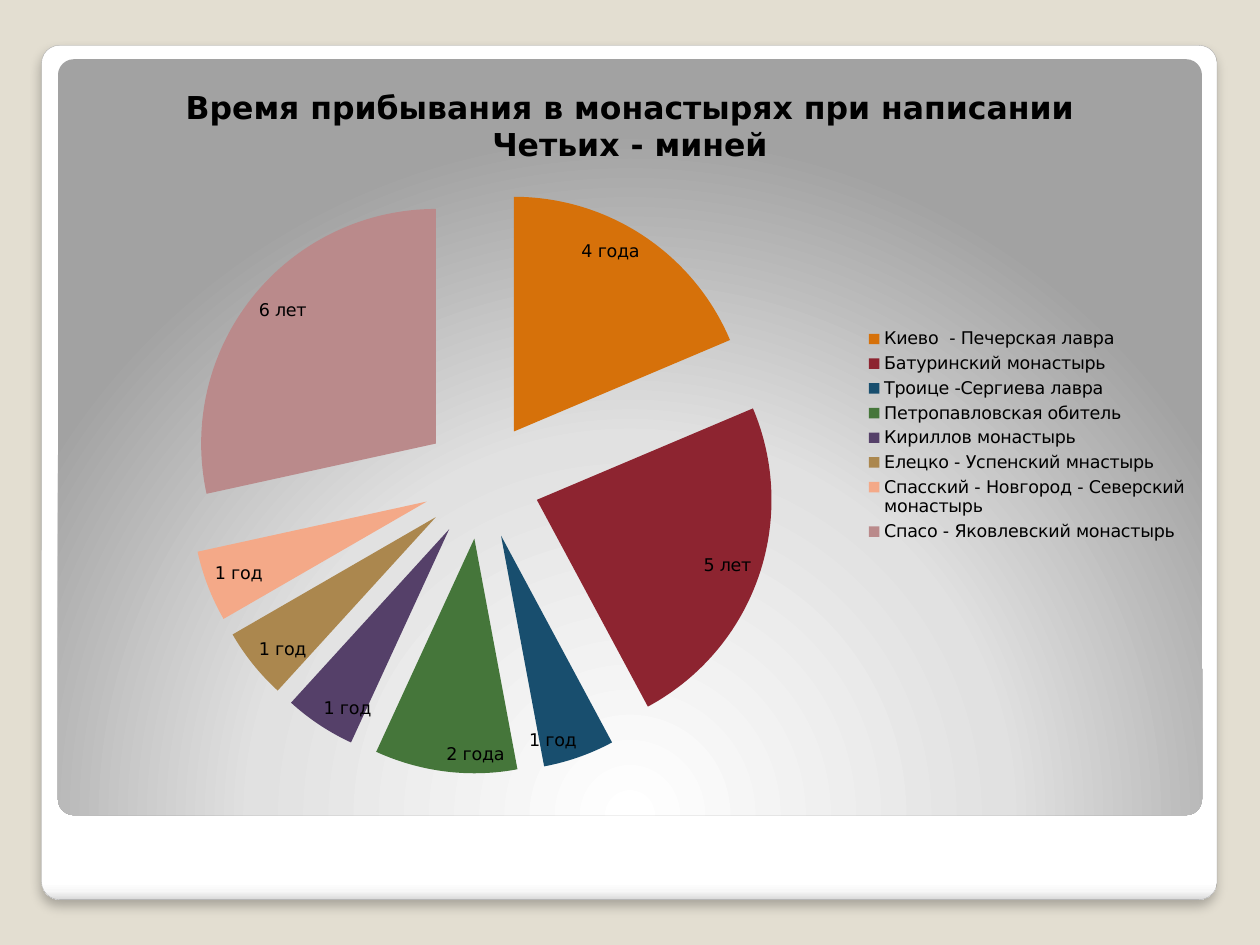
"""Build a slide with an exploded pie chart of the years spent in monasteries."""
from typing import NamedTuple

from lxml.etree import SubElement
from pptx import Presentation
from pptx.chart.data import CategoryChartData
from pptx.dml.color import RGBColor
from pptx.enum.chart import XL_CHART_TYPE as ChartType
from pptx.enum.chart import XL_LABEL_POSITION as LabelPosition
from pptx.enum.chart import XL_LEGEND_POSITION as LegendPosition
from pptx.enum.shapes import MSO_SHAPE as ShapeType
from pptx.oxml import parse_xml
from pptx.oxml.ns import nsdecls, qn
from pptx.util import Inches, Pt

FONT = "DejaVu Sans"
TITLE = "Время прибывания в монастырях при написании Четьих - миней"


class Slice(NamedTuple):
    name: str
    percent: int
    label: str
    color: str


class Panel(NamedTuple):
    left: float
    top: float
    width: float
    height: float
    stops: tuple[tuple[int, str], ...]
    direction: str


SLICES = (
    Slice("Киево  - Печерская лавра", 19, "4 года", "D6710A"),
    Slice("Батуринский монастырь", 24, "5 лет", "8D2430"),
    Slice("Троице -Сергиева лавра", 5, "1 год", "184E6E"),
    Slice("Петропавловская обитель", 10, "2 года", "45763A"),
    Slice("Кириллов монастырь", 5, "1 год", "554069"),
    Slice("Елецко - Успенский мнастырь", 5, "1 год", "AB874E"),
    Slice("Спасский - Новгород - Северский монастырь", 5, "1 год", "F4A988"),
    Slice("Спасо - Яковлевский монастырь", 29, "6 лет", "BA8A8B"),
)
CARD = Panel(
    0.33, 0.36, 9.33, 6.78,
    ((0, "FFFFFF"), (98, "FFFFFF"), (99, "F7F7F7"), (100, "DADADA")),
    '<a:lin ang="5400000" scaled="0"/>',
)
BACKDROP = Panel(
    0.46, 0.47, 9.08, 6,
    ((0, "FFFFFF"), (55, "E1E1E1"), (100, "A2A2A2")),
    '<a:path path="circle"><a:fillToRect l="50000" t="175000" r="50000" b="-75000"/></a:path>',
)


def rgb(value: str) -> RGBColor:
    """Turn a hex string into a colour."""
    return RGBColor.from_string(value)


def style_font(font, size: float, bold: bool = False) -> None:
    """Apply the chart's typeface in black."""
    font.name, font.size, font.bold = FONT, Pt(size), bold
    font.color.rgb = rgb("000000")


def add_panel(slide, panel: Panel):
    """Draw a rounded rectangle with a gradient fill."""
    shape = slide.shapes.add_shape(
        ShapeType.ROUNDED_RECTANGLE,
        *(Inches(length) for length in panel[:4]),
    )
    shape.adjustments[0] = 0.021
    shape.shadow.inherit = False
    shape.line.fill.background()
    stops = "".join(
        f'<a:gs pos="{position * 1000}"><a:srgbClr val="{color}"/></a:gs>'
        for position, color in panel.stops
    )
    gradient = parse_xml(
        f'<a:gradFill rotWithShape="1" {nsdecls("a")}>'
        f"<a:gsLst>{stops}</a:gsLst>{panel.direction}</a:gradFill>"
    )
    shape._element.spPr.find(qn("a:prstGeom")).addnext(gradient)
    return shape


def add_card_edge(shape) -> None:
    """Give the card its thin outline and soft shadow."""
    shape.line.color.rgb = rgb("A4A4A4")
    shape.line.width = Pt(0.16)
    effects = shape._element.spPr.find(qn("a:effectLst"))
    shadow = SubElement(
        effects, qn("a:outerShdw"),
        blurRad=str(Pt(6)), dist=str(Pt(4)), dir="5400000",
        algn="t", rotWithShape="0",
    )
    color = SubElement(shadow, qn("a:srgbClr"), val="000000")
    SubElement(color, qn("a:alpha"), val="25000")


def place_plot(chart, x: float, y: float, w: float, h: float) -> None:
    """Fix the plot area as fractions of the chart and clear the chart's fill."""
    plot_area = chart._chartSpace.chart.plotArea
    for old in plot_area.findall(qn("c:layout")):
        plot_area.remove(old)
    sizes = "".join(
        f'<c:{tag} val="{value}"/>' for tag, value in zip("xywh", (x, y, w, h))
    )
    plot_area.insert(0, parse_xml(
        f'<c:layout {nsdecls("c")}><c:manualLayout><c:layoutTarget val="inner"/>'
        f'<c:xMode val="edge"/><c:yMode val="edge"/>{sizes}'
        "</c:manualLayout></c:layout>"
    ))
    chart._chartSpace.chart.addnext(parse_xml(
        f'<c:spPr {nsdecls("c", "a")}><a:noFill/><a:ln><a:noFill/></a:ln></c:spPr>'
    ))


def explode(series, percent: int) -> None:
    """Pull all slices of a pie away from its centre."""
    explosion = parse_xml(f'<c:explosion {nsdecls("c")} val="{percent}"/>')
    series._element.find(qn("c:tx")).addnext(explosion)


def format_slice(point, item: Slice) -> None:
    """Colour one slice and write its label."""
    point.format.fill.solid()
    point.format.fill.fore_color.rgb = rgb(item.color)
    point.format.line.fill.background()
    label = point.data_label
    run = label.text_frame.paragraphs[0].add_run()
    run.text = item.label
    style_font(run.font, 10)
    label.position = LabelPosition.INSIDE_END


def add_pie(slide) -> None:
    """Add the pie chart with its title and legend."""
    data = CategoryChartData()
    data.categories = [item.name for item in SLICES]
    data.add_series("Series 1", [item.percent for item in SLICES])
    chart = slide.shapes.add_chart(
        ChartType.PIE, Inches(0.47), Inches(0.47), Inches(9.06), Inches(5.97), data
    ).chart
    style_font(chart.font, 10)
    chart.has_title = True
    run = chart.chart_title.text_frame.paragraphs[0].add_run()
    run.text = TITLE
    style_font(run.font, 18, bold=True)
    chart.has_legend = True
    chart.legend.position = LegendPosition.RIGHT
    chart.legend.include_in_layout = False
    style_font(chart.legend.font, 10)
    plot = chart.plots[0]
    plot.vary_by_categories = True
    plot.has_data_labels = True
    plot.data_labels.show_percentage = True
    plot.data_labels.show_value = False
    series = plot.series[0]
    explode(series, 25)
    for index, item in enumerate(SLICES):
        format_slice(series.points[index], item)
    place_plot(chart, 0.11, 0.17, 0.52, 0.78)


def main() -> None:
    """Build and save the presentation."""
    presentation = Presentation()
    presentation.slide_width, presentation.slide_height = Inches(10), Inches(7.5)
    slide = presentation.slides.add_slide(presentation.slide_layouts[6])
    slide.background.fill.solid()
    slide.background.fill.fore_color.rgb = rgb("E3DED1")
    add_card_edge(add_panel(slide, CARD))
    add_panel(slide, BACKDROP)
    add_pie(slide)
    presentation.save("out.pptx")


if __name__ == "__main__":
    main()
